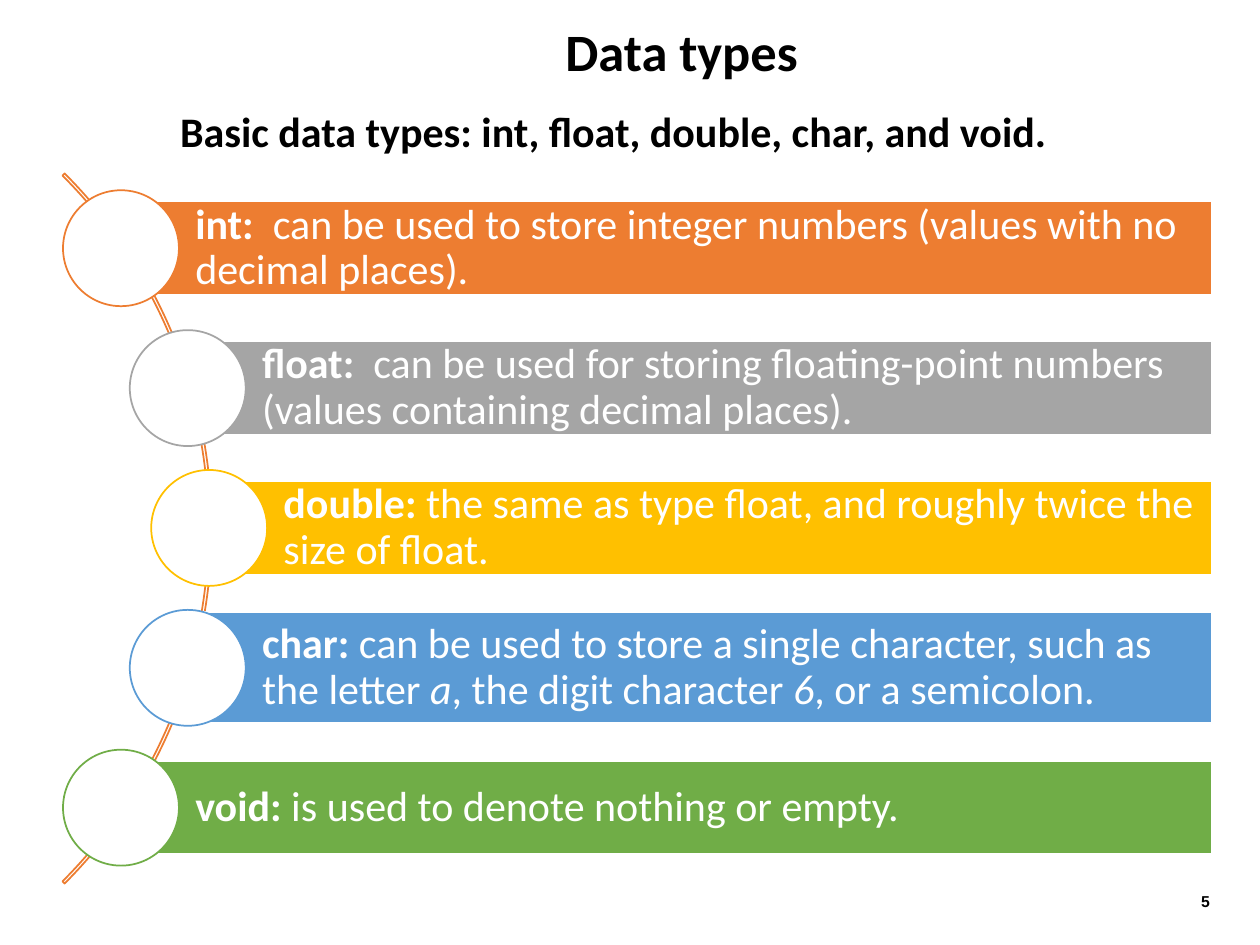
from dataclasses import dataclass

from lxml import etree
from pptx import Presentation
from pptx.dml.color import RGBColor
from pptx.enum import shapes, text
from pptx.oxml import ns
from pptx.util import Inches, Pt


@dataclass(frozen=True)
class Theme:
    """Colours, fonts and type sizes of the slide."""
    black: str = "000000"
    white: str = "FFFFFF"
    orange: str = "ED7D31"
    gray: str = "A5A5A5"
    gold: str = "FFC000"
    blue: str = "5B9BD5"
    green: str = "70AD47"
    font: str = "Calibri"
    number_font: str = "Arial"
    title_size: int = 30
    body_size: int = 24
    number_size: int = 9


THEME = Theme()
PITCH, FIRST_Y, RIGHT = 1.11, 1.97, 9.62
CIRCLE = 0.92
TYPES = [
    (0.96, 0.74, THEME.orange, [
        ("int:  ", "b"),
        ("can be used to store integer numbers (values with no decimal places).", "")]),
    (1.49, 0.74, THEME.gray, [
        ("float:  ", "b"),
        ("can be used for storing floating-point numbers (values containing decimal places).", "")]),
    (1.66, 0.74, THEME.gold, [
        ("double: ", "b"),
        ("the same as type float, and roughly twice the size of float.", "")]),
    (1.49, 0.88, THEME.blue, [
        ("char:", "b"),
        (" can be used to store a single character, such as the letter ", ""),
        ("a", "i"), (", the digit character ", ""), ("6", "i"), (", or a semicolon.", "")]),
    (0.96, 0.74, THEME.green, [
        ("void: ", "b"),
        ("is used to denote nothing or empty.", "")]),
]


def write(s, runs, size, color, align, font=THEME.font, spacing=0.9, insets=(0.1, 0.05, 0.1, 0.05),
          anchor=text.MSO_ANCHOR.MIDDLE):
    """Fill a shape with one paragraph of (words, style) runs."""
    tf = s.text_frame
    tf.word_wrap = True
    tf.vertical_anchor = anchor
    tf.margin_left, tf.margin_top, tf.margin_right, tf.margin_bottom = map(Inches, insets)
    p = tf.paragraphs[0]
    p.alignment = align
    p.line_spacing = spacing
    for words, style in runs:
        r = p.add_run()
        r.text = words
        r.font.name, r.font.size = font, Pt(size)
        r.font.bold, r.font.italic = "b" in style, "i" in style
        r.font.color.rgb = RGBColor.from_string(color)


def add_label(slide, box, words, size, align, **options):
    """Add a bold black text box."""
    s = slide.shapes.add_textbox(*map(Inches, box))
    write(s, [(words, "b")], size, THEME.black, align, **options)


def add_figure(slide, kind, box, fill, line):
    """Add a preset shape with a thin outline and an optional fill."""
    s = slide.shapes.add_shape(kind, *map(Inches, box))
    s.shadow.inherit = False
    if fill:
        s.fill.solid()
        s.fill.fore_color.rgb = RGBColor.from_string(fill)
    else:
        s.fill.background()
    s.line.color.rgb = RGBColor.from_string(line)
    s.line.width = Pt(1)
    return s


def add_arc(slide):
    """Add the thin arc that links the circles."""
    s = add_figure(slide, shapes.MSO_SHAPE.BLOCK_ARC, (-6.29, 0.21, 7.97, 7.97), None, THEME.orange)
    for i, value in enumerate((189, 27, 0.003)):
        s.adjustments[i] = value


def add_type(slide, y, left, height, color, runs):
    """Add one data type: a bar with its text and a circle on its left end."""
    bar = add_figure(slide, shapes.MSO_SHAPE.RECTANGLE,
                     (left, y - height / 2, RIGHT - left, height), color, THEME.white)
    write(bar, runs, THEME.body_size, THEME.white, text.PP_ALIGN.LEFT, insets=(0.59, 0, 0.07, 0))
    add_figure(slide, shapes.MSO_SHAPE.OVAL,
               (left - CIRCLE / 2, y - CIRCLE / 2, CIRCLE, CIRCLE), THEME.white, color)


def add_slide_number(slide):
    """Add the slide number as a live field."""
    s = slide.shapes.add_textbox(*map(Inches, (9.31, 6.95, 0.39, 0.4)))
    write(s, [("5", "b")], THEME.number_size, THEME.black, text.PP_ALIGN.RIGHT,
          font=THEME.number_font, spacing=1.0)


def main():
    """Build the slide and save it."""
    prs = Presentation()
    prs.slide_width, prs.slide_height = Inches(10), Inches(7.5)
    slide = prs.slides.add_slide(prs.slide_layouts[6])
    add_label(slide, (2.47, 0.15, 5.88, 0.56), "Data types", THEME.title_size, text.PP_ALIGN.CENTER)
    add_label(slide, (1.36, 0.84, 8.64, 0.4), "Basic data types: int, float, double, char, and void.",
              THEME.body_size, text.PP_ALIGN.JUSTIFY, insets=(0.07, 0.04, 0.07, 0.04),
              anchor=text.MSO_ANCHOR.TOP)
    add_slide_number(slide)
    add_arc(slide)
    for i, row in enumerate(TYPES):
        add_type(slide, FIRST_Y + i * PITCH, *row)
    prs.save("out.pptx")


if __name__ == "__main__":
    main()
